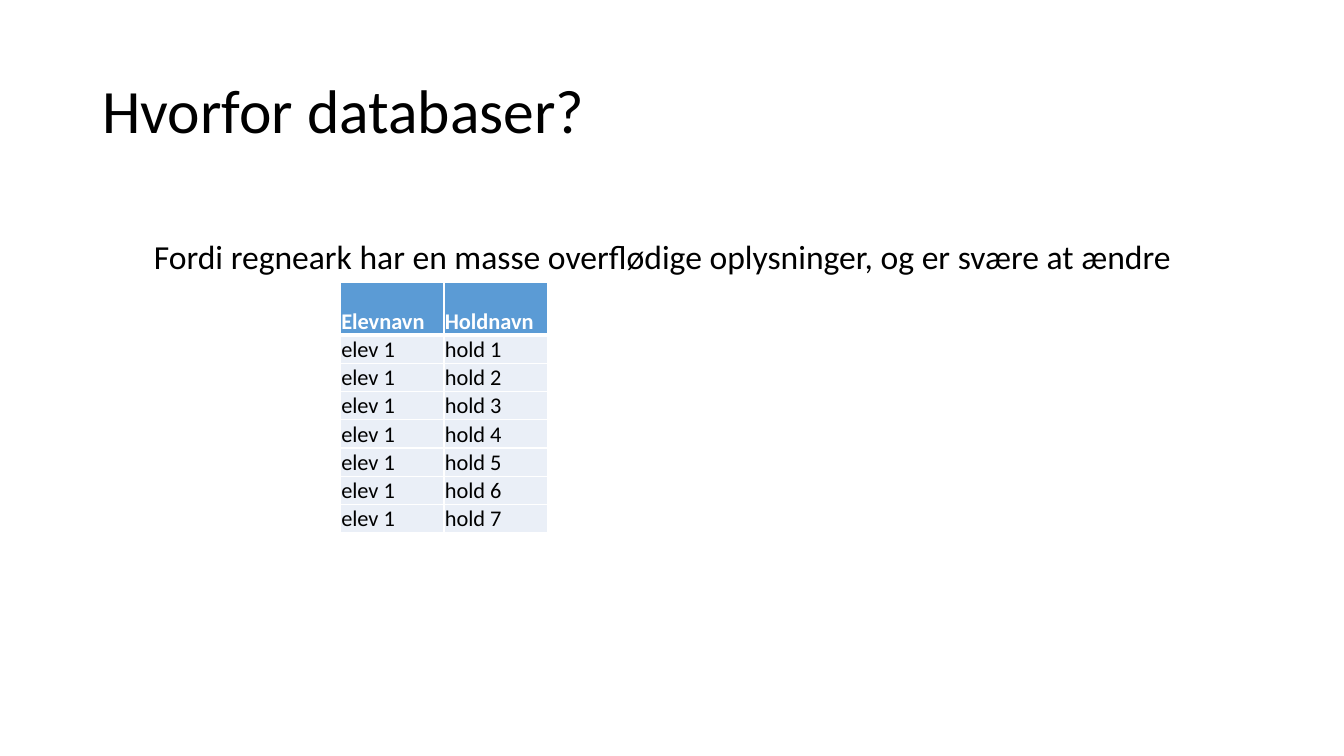
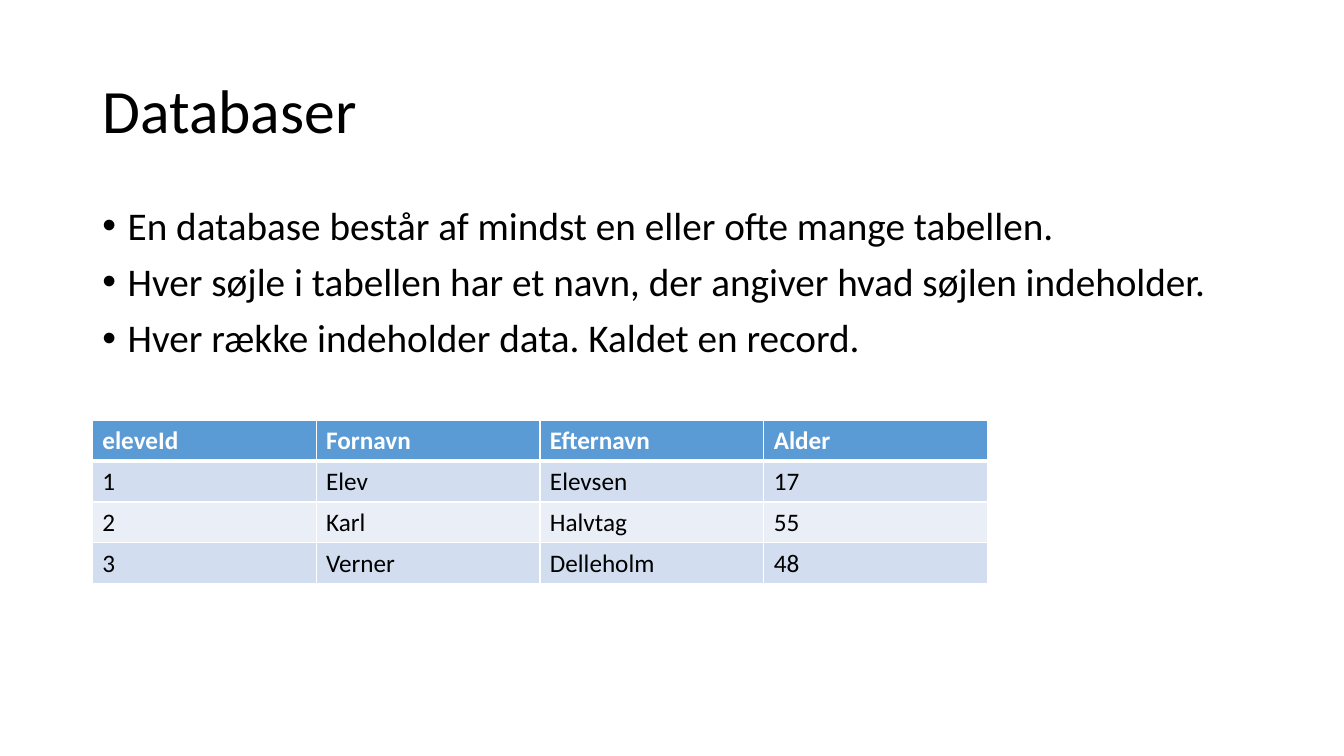
from lxml import etree
from pptx import Presentation
from pptx.dml.color import RGBColor
from pptx.enum.text import MSO_ANCHOR
from pptx.oxml.ns import qn
from pptx.util import Cm, Pt

TOP, MIDDLE, BOTTOM = MSO_ANCHOR.TOP, MSO_ANCHOR.MIDDLE, MSO_ANCHOR.BOTTOM
BLACK = RGBColor(0x00, 0x00, 0x00)
WHITE = RGBColor(0xFF, 0xFF, 0xFF)
BLUE = RGBColor(0x5B, 0x9B, 0xD5)
PALE = RGBColor(0xEA, 0xEF, 0xF7)
LIGHT = RGBColor(0xD2, 0xDE, 0xEF)
FONT = "Calibri"
LEFT, WIDE = 2.33, 29.21


def write(frame, *lines, size=18, color=BLACK, bold=False, spacing=None,
          gap=0, bullet=False):
    for i, line in enumerate(lines):
        para = frame.add_paragraph() if i else frame.paragraphs[0]
        if bullet:
            props = para._p.get_or_add_pPr()
            props.set("marL", str(Cm(0.64)))
            props.set("indent", str(-Cm(0.64)))
            etree.SubElement(props, qn("a:buFont"), typeface="Arial")
            etree.SubElement(props, qn("a:buChar"), char="•")
        if spacing:
            para.line_spacing = spacing
        para.space_before = Pt(gap if i else 0)
        run = para.add_run()
        run.text = line
        run.font.name = FONT
        run.font.size = Pt(size)
        run.font.bold = bold
        run.font.color.rgb = color


def edge(cell, side, width):
    """Draw one white cell border; call before the cell gets its fill."""
    props = cell._tc.get_or_add_tcPr()
    line = etree.SubElement(props, qn("a:ln" + side), w=str(Pt(width)))
    fill = etree.SubElement(line, qn("a:solidFill"))
    etree.SubElement(fill, qn("a:srgbClr"), val=str(WHITE))


class Deck:
    def __init__(self):
        self.file = Presentation()
        self.file.slide_width = Cm(33.87)
        self.file.slide_height = Cm(19.05)
        self.slide = None

    def start(self, title):
        self.slide = self.file.slides.add_slide(self.file.slide_layouts[6])
        self.text(LEFT, 1.01, WIDE, 3.68, title, anchor=MIDDLE,
                  size=44, spacing=0.9)

    def text(self, x, y, w, h, *lines, anchor=TOP, wrap=True, **style):
        box = self.slide.shapes.add_textbox(Cm(x), Cm(y), Cm(w), Cm(h))
        box.text_frame.word_wrap = wrap
        box.text_frame.vertical_anchor = anchor
        write(box.text_frame, *lines, **style)

    def table(self, x, y, width, heights, rows, bands, size=18,
              anchor=TOP, insets=(0.25, 0.13, 0.25, 0.13)):
        """Draw a table; the first row is the header, the rest cycle bands."""
        count = len(rows[0])
        grid = self.slide.shapes.add_table(
            len(rows), count, Cm(x), Cm(y),
            Cm(width * count), Cm(sum(heights))).table
        for col in grid.columns:
            col.width = Cm(width)
        for r, (row, height) in enumerate(zip(rows, heights)):
            grid.rows[r].height = Cm(height)
            head = r == 0
            for c, value in enumerate(row):
                cell = grid.cell(r, c)
                cell.vertical_anchor = anchor
                (cell.margin_left, cell.margin_top, cell.margin_right,
                 cell.margin_bottom) = map(Cm, insets)
                for side in "LRTB":
                    thick = (side, r) in (("B", 0), ("T", 1))
                    edge(cell, side, 3 if thick else 1)
                cell.fill.solid()
                cell.fill.fore_color.rgb = (
                    BLUE if head else bands[(r - 1) % len(bands)])
                write(cell.text_frame, value, size=size, bold=head,
                      color=WHITE if head else BLACK)


def main():
    deck = Deck()

    deck.start("Hvorfor databaser?")
    teams = [("Elevnavn", "Holdnavn")]
    teams += [("elev 1", f"hold {n}") for n in range(1, 8)]
    deck.table(8.58, 7.11, 2.61, [1.34] + [0.71] * 7, teams, [PALE],
               size=16, anchor=BOTTOM, insets=(0.02, 0.02, 0.02, 0))
    deck.text(3.63, 5.82, 26.24, 1.28,
              "Fordi regneark har en masse overflødige oplysninger, "
              "og er svære at ændre", wrap=False, size=24)

    deck.start("Databaser")
    deck.text(LEFT, 5.07, WIDE, 12.09,
              "En database består af mindst en eller ofte mange tabellen.",
              "Hver søjle i tabellen har et navn, der angiver hvad søjlen "
              "indeholder.",
              "Hver række indeholder data. Kaldet en record.",
              size=28, spacing=0.9, gap=10, bullet=True)
    pupils = [("eleveId", "Fornavn", "Efternavn", "Alder"),
              ("1", "Elev", "Elevsen", "17"),
              ("2", "Karl", "Halvtag", "55"),
              ("3", "Verner", "Delleholm", "48")]
    deck.table(LEFT, 10.59, 5.64, [1.03] * 4, pupils, [LIGHT, PALE])

    deck.file.save("out.pptx")


if __name__ == "__main__":
    main()
